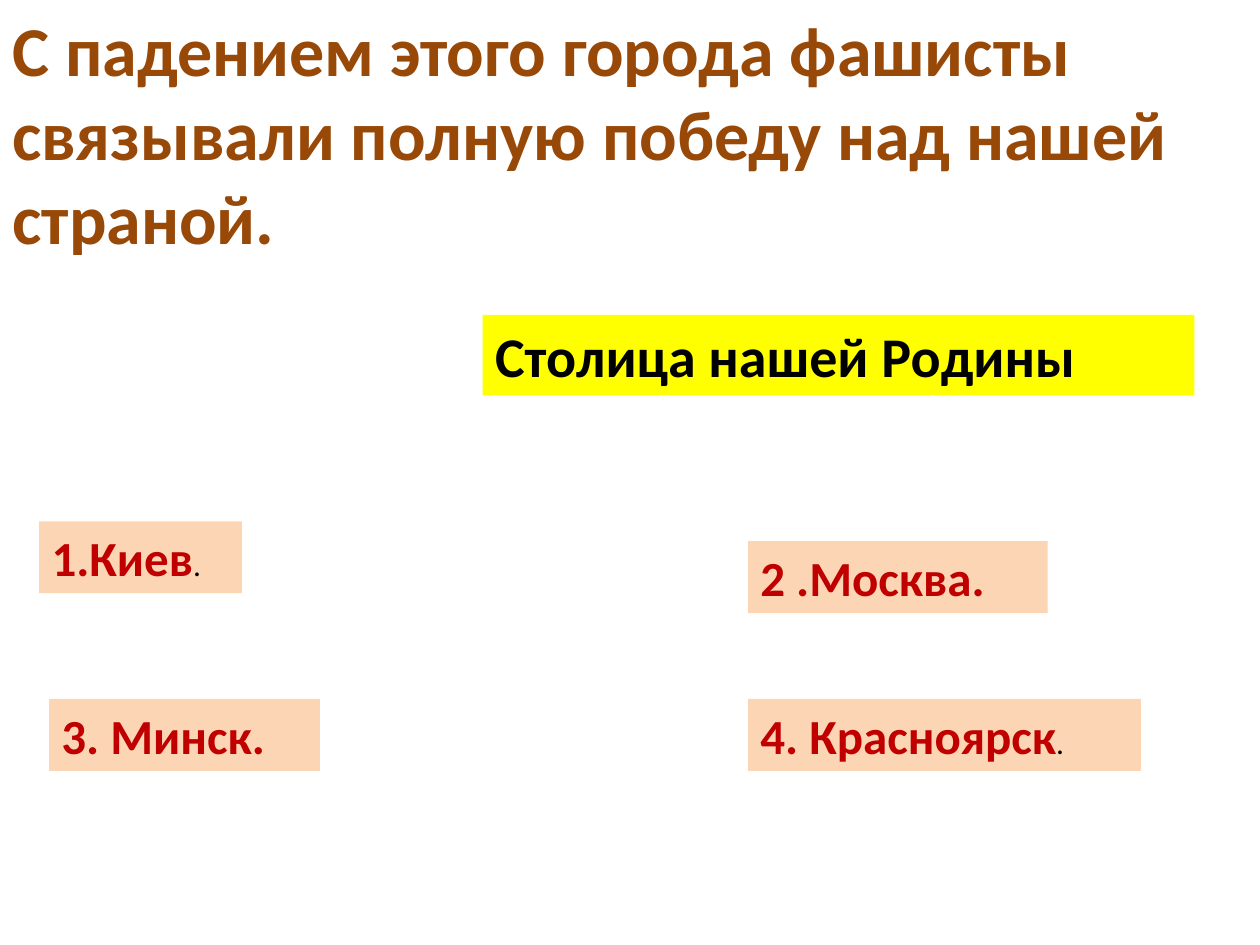
from pptx import Presentation
from pptx.dml.color import RGBColor
from pptx.enum.text import MSO_ANCHOR, MSO_AUTO_SIZE, PP_ALIGN
from pptx.util import Cm, Pt

COLORS = {
    "question": "984807",
    "hint_fill": "FFFF00",
    "answer_fill": "FCD5B5",
    "answer": "C00000",
    "black": "000000",
}
TITLE_ONLY = 5
ANSWER_HEIGHT = 1.45

# Text, closing small dot, left, top, width (cm)
ANSWERS = [
    ("1.Киев", ".", 0.79, 10.51, 4.09),
    ("2 .Москва.", "", 15.08, 10.91, 6.04),
    ("3. Минск.", "", 0.99, 14.09, 5.46),
    ("4. Красноярск", ".", 15.08, 14.09, 7.92),
]


def rgb(name):
    return RGBColor.from_string(COLORS[name])


def style_run(run, size, color, bold=True):
    font = run.font
    font.name = "Calibri"
    font.size = Pt(size)
    font.bold = bold
    font.color.rgb = rgb(color)


def place_question(slide, left, top, width, height):
    question = slide.shapes.title
    question.left, question.top = Cm(left), Cm(top)
    question.width, question.height = Cm(width), Cm(height)
    frame = question.text_frame
    frame.text = "С падением этого города фашисты связывали полную победу над нашей страной."
    frame.word_wrap = True
    frame.auto_size = MSO_AUTO_SIZE.NONE
    frame.vertical_anchor = MSO_ANCHOR.TOP
    paragraph = frame.paragraphs[0]
    paragraph.alignment = PP_ALIGN.LEFT
    style_run(paragraph.runs[0], 40, "question")


def add_label(slide, text, left, top, width, height, fill, size, color):
    """Add a filled one-line text box and return its paragraph."""
    label = slide.shapes.add_textbox(Cm(left), Cm(top), Cm(width), Cm(height))
    label.fill.solid()
    label.fill.fore_color.rgb = rgb(fill)
    frame = label.text_frame
    frame.word_wrap = True
    frame.text = text
    paragraph = frame.paragraphs[0]
    style_run(paragraph.runs[0], size, color)
    return paragraph


def add_answer(slide, text, dot, left, top, width):
    paragraph = add_label(slide, text, left, top, width, ANSWER_HEIGHT,
                          "answer_fill", 28, "answer")
    if dot:
        dot_run = paragraph.add_run()
        dot_run.text = dot
        style_run(dot_run, 18, "black", bold=False)


def main():
    deck = Presentation()
    deck.slide_width, deck.slide_height = Cm(25.4), Cm(19.05)
    slide = deck.slides.add_slide(deck.slide_layouts[TITLE_ONLY])
    place_question(slide, 0, 0, 25.4, 5.38)
    add_label(slide, "Столица нашей Родины", 9.73, 6.35, 14.35, 1.62,
              "hint_fill", 32, "black")
    for answer in ANSWERS:
        add_answer(slide, *answer)
    deck.save("out.pptx")


if __name__ == "__main__":
    main()
